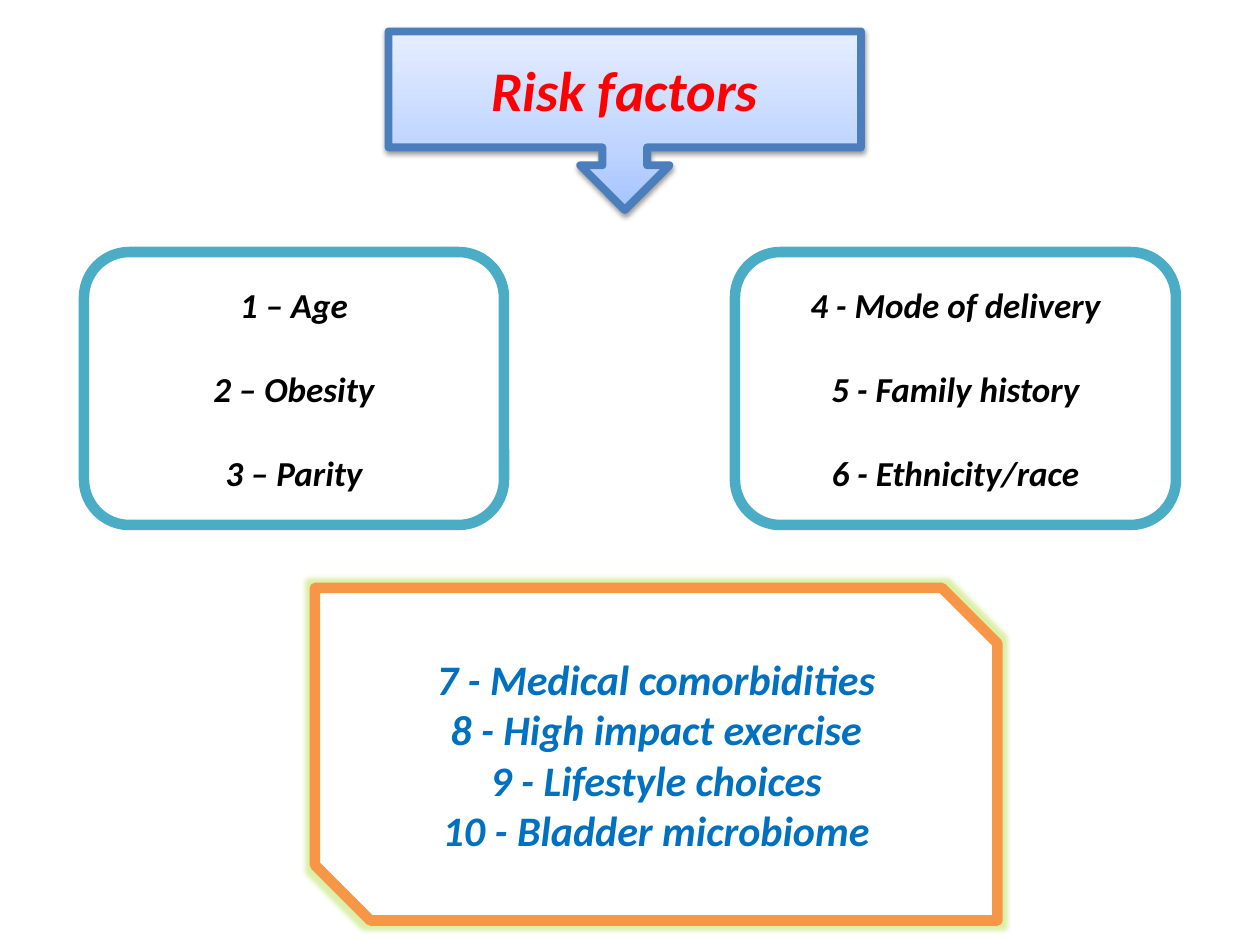
from copy import deepcopy

from lxml import etree
from pptx import Presentation
from pptx.dml.color import RGBColor
from pptx.enum.shapes import MSO_SHAPE
from pptx.enum.text import MSO_ANCHOR, PP_ALIGN
from pptx.oxml.ns import qn
from pptx.util import Pt

CALLOUT = MSO_SHAPE.DOWN_ARROW_CALLOUT
ROUNDED = MSO_SHAPE.ROUNDED_RECTANGLE
SNIPPED = MSO_SHAPE.SNIP_2_DIAG_RECTANGLE
MIDDLE = MSO_ANCHOR.MIDDLE
CENTER = PP_ALIGN.CENTER
BLANK_LAYOUT = 6


def color(hex_string):
    return RGBColor.from_string(hex_string)


def add_effect(shape, tag, hex_string, opacity, **attributes):
    """Put a shadow or glow in the shape's effect list; opacity is in percent."""
    effects = shape._element.spPr.find(qn("a:effectLst"))
    effect = etree.SubElement(effects, qn(tag))
    for name, value in attributes.items():
        effect.set(name, str(int(value)))
    effect_color = etree.SubElement(effect, qn("a:srgbClr"), val=hex_string)
    etree.SubElement(effect_color, qn("a:alpha"), val=str(opacity * 1000))


presentation = Presentation()
presentation.slide_width = Pt(720)
presentation.slide_height = Pt(540)
slide = presentation.slides.add_slide(presentation.slide_layouts[BLANK_LAYOUT])

# kind, (left, top, width, height), line colour, line width,
# text colour, text size, gap between paragraphs, lines of text
boxes = [
    (CALLOUT, (222, 18, 270, 102), "4B7EBC", 4.5, "FF0000", 32, 0,
     ["Risk factors"]),
    (ROUNDED, (48, 144, 240, 156), "4BACC6", 6, "000000", 20, 24,
     ["1 – Age", "2 – Obesity", "3 – Parity"]),
    (ROUNDED, (420, 144, 252, 156), "4BACC6", 6, "000000", 20, 24,
     ["4 - Mode of delivery", "5 - Family history", "6 - Ethnicity/race"]),
    (SNIPPED, (180, 336, 390, 190), "F79646", 6, "0070C0", 24, 0,
     ["7 - Medical comorbidities", "8 - High impact exercise",
      "9 - Lifestyle choices", "10 - Bladder microbiome"]),
]

for kind, place, line_color, line_width, text_color, size, gap, lines in boxes:
    shape = slide.shapes.add_shape(kind, *[Pt(length) for length in place])
    shape.shadow.inherit = False
    shape.line.color.rgb = color(line_color)
    shape.line.width = Pt(line_width)

    if kind == CALLOUT:
        shape.fill.gradient()
        shape.fill.gradient_angle = 90
        stop_list = shape._element.spPr.find(".//" + qn("a:gsLst"))
        stop_list.append(deepcopy(stop_list[0]))
        gradient = [(0, "A4C4FF"), (0.35, "BFD4FF"), (1, "E6EEFF")]
        for stop, (position, stop_color) in zip(shape.fill.gradient_stops, gradient):
            stop.position = position
            stop.color.rgb = color(stop_color)
        add_effect(shape, "a:outerShdw", "000000", 38,
                   blurRad=Pt(3.1), dist=Pt(1.6), dir=90 * 60000, rotWithShape=0)
    else:
        shape.fill.solid()
        shape.fill.fore_color.rgb = color("FFFFFF")
    if kind == SNIPPED:
        add_effect(shape, "a:glow", "A5D928", 40, rad=Pt(5))

    text_frame = shape.text_frame
    text_frame.word_wrap = True
    text_frame.vertical_anchor = MIDDLE
    for index, line in enumerate(lines):
        paragraph = text_frame.add_paragraph() if index else text_frame.paragraphs[0]
        paragraph.alignment = CENTER
        if index and gap:
            paragraph.space_before = Pt(gap)
        run = paragraph.add_run()
        run.text = line
        run.font.name = "Calibri"
        run.font.size = Pt(size)
        run.font.bold = True
        run.font.italic = True
        run.font.color.rgb = color(text_color)

presentation.save("out.pptx")
